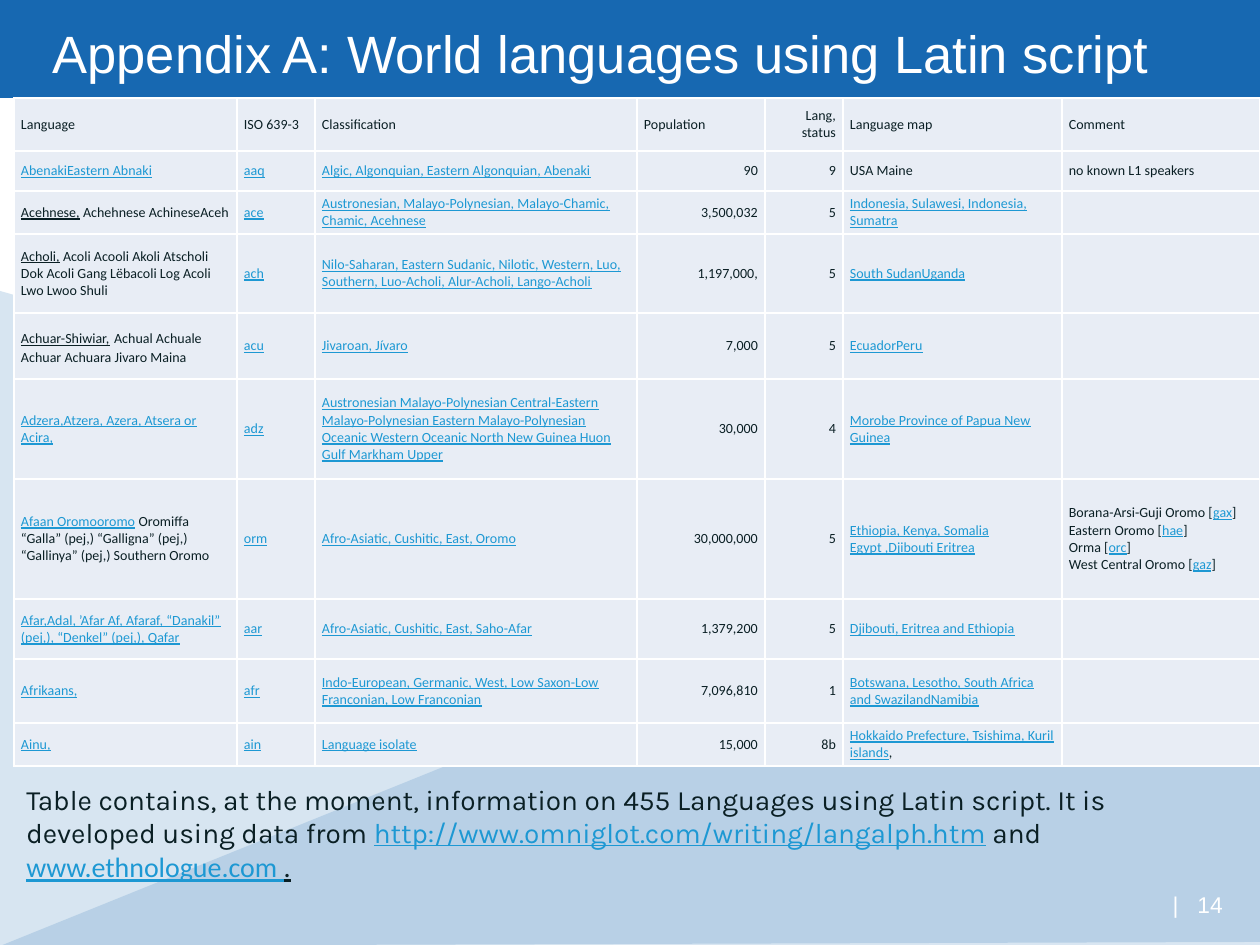
from dataclasses import dataclass

from lxml.etree import SubElement
from pptx import Presentation
from pptx.dml.color import RGBColor
from pptx.enum.text import MSO_ANCHOR, PP_ALIGN
from pptx.oxml.ns import qn
from pptx.util import Pt

SLIDE_W, SLIDE_H = 1260, 945


def px(n):
    return round(n * 914400 / 126)


@dataclass(frozen=True)
class Theme:
    blue: str = "1768B1"
    ink: str = "0A1F24"
    link: str = "1D98D3"
    cell: str = "E8EDF5"
    white: str = "FFFFFF"
    heading: str = "Arial"
    table: str = "Calibri"
    body: str = "Karla"
    title_size: int = 30
    caption_size: int = 16
    number_size: int = 13
    cell_size: int = 8
    gap_size: int = 11


T = Theme()
CELL_TEXT = {"name": T.table, "size": T.cell_size, "color": T.ink}
ROLES = {
    "plain": CELL_TEXT,
    "link": {**CELL_TEXT, "color": T.link, "underline": True},
    "name": {**CELL_TEXT, "underline": True},
    "gap": {**CELL_TEXT, "size": T.gap_size},
}

COLUMN_WIDTHS = [223, 78, 322, 128, 78, 219, 198]
COLUMN_ROLES = ["link", "link", "link", "plain", "plain", "link", "plain"]
RIGHT_COLUMNS = {3, 4}
ROW_HEIGHTS = [53, 40, 43, 79, 66, 100, 120, 60, 64, 43]
HEADERS = ["Language", "ISO 639-3", "Classification", "Population",
           "Lang, status", "Language map", "Comment"]
OROMO_VARIETIES = [("Borana-Arsi-Guji Oromo", "gax"), ("Eastern Oromo", "hae"),
                   ("Orma", "orc"), ("West Central Oromo", "gaz")]

# A cell is a string in its column's role, or a list of paragraphs of (text, role).
LANGUAGES = [
    ["AbenakiEastern Abnaki", "aaq",
     "Algic, Algonquian, Eastern Algonquian, Abenaki", "90", "9",
     [[("USA Maine", "plain")]], "no known L1 speakers"],
    [[[("Acehnese,", "name"), (" Achehnese AchineseAceh", "plain")]], "ace",
     "Austronesian, Malayo-Polynesian, Malayo-Chamic, Chamic, Acehnese",
     "3,500,032", "5", "Indonesia, Sulawesi, Indonesia, Sumatra", ""],
    [[[("Acholi,", "name"),
       (" Acoli Acooli Akoli Atscholi Dok Acoli Gang Lëbacoli Log Acoli "
        "Lwo Lwoo Shuli", "plain")]], "ach",
     "Nilo-Saharan, Eastern Sudanic, Nilotic, Western, Luo, Southern, "
     "Luo-Acholi, Alur-Acholi, Lango-Acholi",
     "1,197,000,", "5", "South SudanUganda", ""],
    [[[("Achuar-Shiwiar,", "name"), (" ", "gap"),
       ("Achual Achuale Achuar Achuara Jivaro Maina", "plain")]], "acu",
     "Jivaroan, Jívaro", "7,000", "5", "EcuadorPeru", ""],
    ["Adzera,Atzera, Azera, Atsera or Acira,", "adz",
     "Austronesian Malayo-Polynesian Central-Eastern Malayo-Polynesian "
     "Eastern Malayo-Polynesian Oceanic Western Oceanic North New Guinea "
     "Huon Gulf Markham Upper",
     "30,000", "4", "Morobe Province of Papua New Guinea", ""],
    [[[("Afaan Oromooromo", "link"),
       (" Oromiffa “Galla” (pej,) “Galligna” (pej,) “Gallinya” (pej,) "
        "Southern Oromo", "plain")]], "orm",
     "Afro-Asiatic, Cushitic, East, Oromo", "30,000,000", "5",
     "Ethiopia, Kenya, Somalia Egypt ,Djibouti Eritrea",
     [[(f"{variety} [", "plain"), (code, "link"), ("]", "plain")]
      for variety, code in OROMO_VARIETIES]],
    ["Afar,Adal, ’Afar Af, Afaraf, “Danakil” (pej,), “Denkel” (pej,), Qafar",
     "aar", "Afro-Asiatic, Cushitic, East, Saho-Afar", "1,379,200", "5",
     "Djibouti, Eritrea and Ethiopia", ""],
    ["Afrikaans,", "afr",
     "Indo-European, Germanic, West, Low Saxon-Low Franconian, Low Franconian",
     "7,096,810", "1", "Botswana, Lesotho, South Africa and SwazilandNamibia", ""],
    ["Ainu,", "ain", "Language isolate", "15,000", "8b",
     [[("Hokkaido Prefecture, Tsishima, Kuril islands", "link"),
       (",", "plain")]], ""],
]


def set_fill(obj, color):
    obj.fill.solid()
    obj.fill.fore_color.rgb = RGBColor.from_string(color)


def add_run(p, text, color, size, **fmt):
    r = p.add_run()
    r.text = text
    r.font.color.rgb = RGBColor.from_string(color)
    r.font.size = Pt(size)
    for key, value in fmt.items():
        setattr(r.font, key, value)
    return r


def add_facet(s, points, opacity):
    """Draw a translucent blue background polygon."""
    builder = s.shapes.build_freeform(*points[0], scale=px(1))
    builder.add_line_segments(points[1:], close=True)
    sp = builder.convert_to_shape()
    sp.shadow.inherit = False
    sp.line.fill.background()
    set_fill(sp, T.blue)
    clr = sp.fill._xPr.find(qn("a:solidFill"))[0]
    SubElement(clr, qn("a:alpha"), val=str(opacity * 1000))


def add_text_box(s, x, y, w, h):
    tf = s.shapes.add_textbox(px(x), px(y), px(w), px(h)).text_frame
    tf.word_wrap = True
    return tf.paragraphs[0]


def set_title(s, text):
    sp = s.shapes.title
    sp.left, sp.top, sp.width, sp.height = 0, 0, px(SLIDE_W), px(98)
    set_fill(sp, T.blue)
    tf = sp.text_frame
    tf.vertical_anchor = MSO_ANCHOR.MIDDLE
    p = tf.paragraphs[0]
    p.alignment = PP_ALIGN.LEFT
    p.line_spacing = Pt(39.8)
    p._p.get_or_add_pPr().set("marL", str(px(40)))
    add_run(p, text, T.white, T.title_size, name=T.heading)


def set_borders(cell):
    tcPr = cell._tc.get_or_add_tcPr()
    for i, side in enumerate(("lnL", "lnR", "lnT", "lnB")):
        ln = tcPr.makeelement(qn(f"a:{side}"), {"w": str(Pt(1))})
        fill = SubElement(ln, qn("a:solidFill"))
        SubElement(fill, qn("a:srgbClr"), val=T.white)
        tcPr.insert(i, ln)


def fill_cell(cell, content, role, align):
    layout = {"margin_left": px(7), "margin_right": px(7), "margin_top": 0,
              "margin_bottom": 0, "vertical_anchor": MSO_ANCHOR.MIDDLE}
    for key, value in layout.items():
        setattr(cell, key, value)
    set_fill(cell, T.cell)
    set_borders(cell)
    if not content:
        return
    paragraphs = [[(content, role)]] if isinstance(content, str) else content
    tf = cell.text_frame
    for i, runs in enumerate(paragraphs):
        p = tf.add_paragraph() if i else tf.paragraphs[0]
        p.alignment = align
        for text, run_role in runs:
            add_run(p, text, **ROLES[run_role])


def add_language_table(s, x, y):
    rows = [HEADERS] + LANGUAGES
    table = s.shapes.add_table(len(rows), len(HEADERS), px(x), px(y),
                               px(sum(COLUMN_WIDTHS)), px(sum(ROW_HEIGHTS))).table
    table.first_row = table.horz_banding = False
    for column, width in zip(table.columns, COLUMN_WIDTHS):
        column.width = px(width)
    for i, (row, height) in enumerate(zip(rows, ROW_HEIGHTS)):
        table.rows[i].height = px(height)
        for j, content in enumerate(row):
            role = COLUMN_ROLES[j] if i else "plain"
            right = j in RIGHT_COLUMNS and (i or content == "Lang, status")
            fill_cell(table.cell(i, j), content, role,
                      PP_ALIGN.RIGHT if right else PP_ALIGN.LEFT)


def add_caption(s):
    p = add_text_box(s, 14, 776, 1232, 81)
    size = T.caption_size
    link = {"color": T.link, "size": size, "underline": True}
    add_run(p, "Table contains, at the moment, information on 455 Languages using "
            "Latin script. It is developed using data from ", T.ink, size, name=T.body)
    add_run(p, "http://www.omniglot.com/writing/langalph.htm", name=T.body, **link)
    add_run(p, " and ", T.ink, size, name=T.body)
    add_run(p, "www.ethnologue.com ", name=T.table, **link)
    add_run(p, ".", T.ink, size, name=T.table, underline=True)


def add_page_number(s, number):
    p = add_text_box(s, 941, 885, 294, 50)
    p.alignment = PP_ALIGN.RIGHT
    for text in ("|", " ", number):
        r = add_run(p, text, T.white, T.number_size, name=T.heading)
        if text == " ":
            r.font._element.set("spc", "720")


def main():
    prs = Presentation()
    prs.slide_width, prs.slide_height = px(SLIDE_W), px(SLIDE_H)
    s = prs.slides.add_slide(prs.slide_layouts[5])
    add_facet(s, [(0, 291), (1268, 649), (1268, 942), (0, 946)], 17)
    add_facet(s, [(1260, 437), (1260, 946), (0, 946)], 16)
    add_page_number(s, "14")
    set_title(s, "Appendix A: World languages using Latin script")
    add_language_table(s, 14, 98)
    add_caption(s)
    prs.save("out.pptx")


if __name__ == "__main__":
    main()
